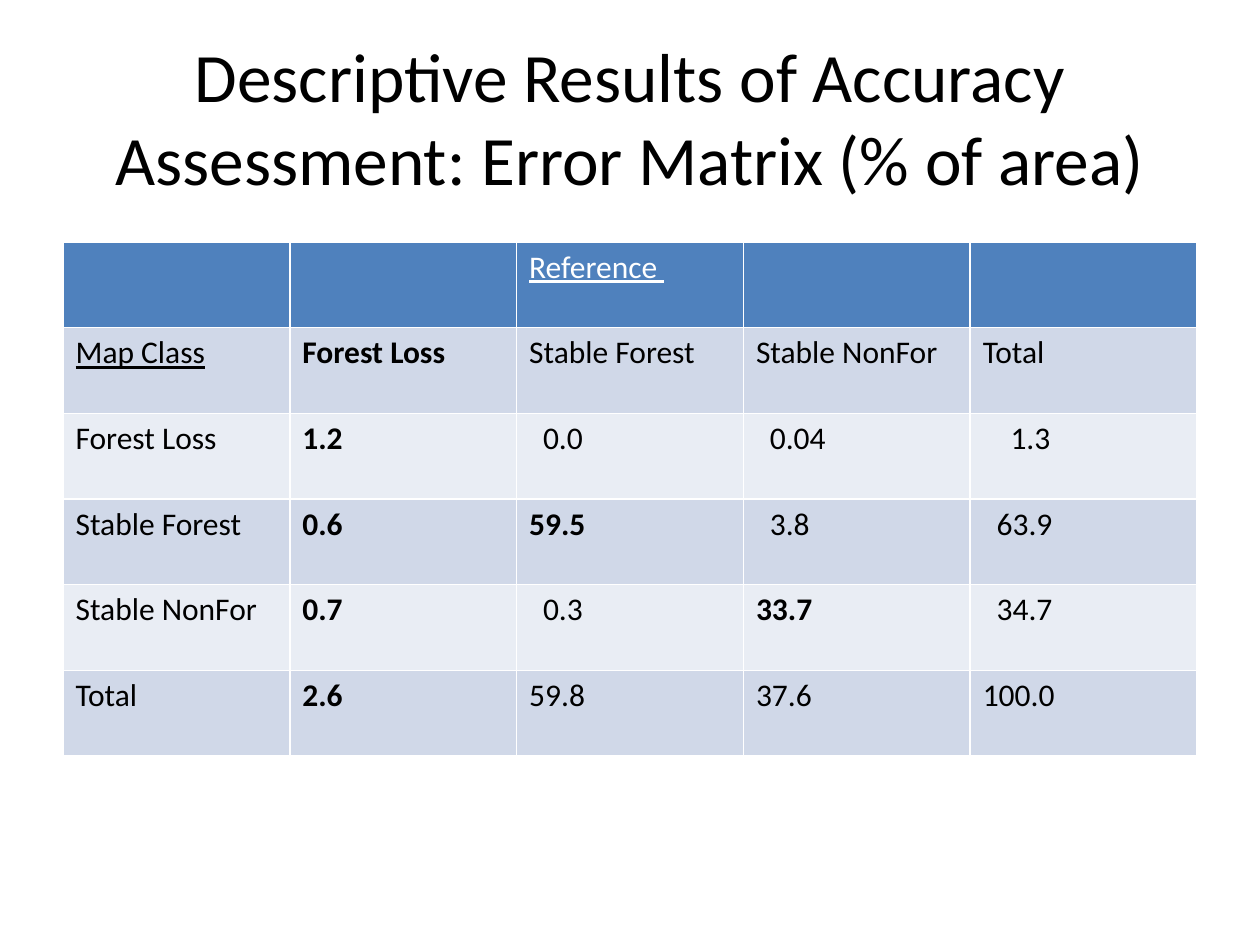
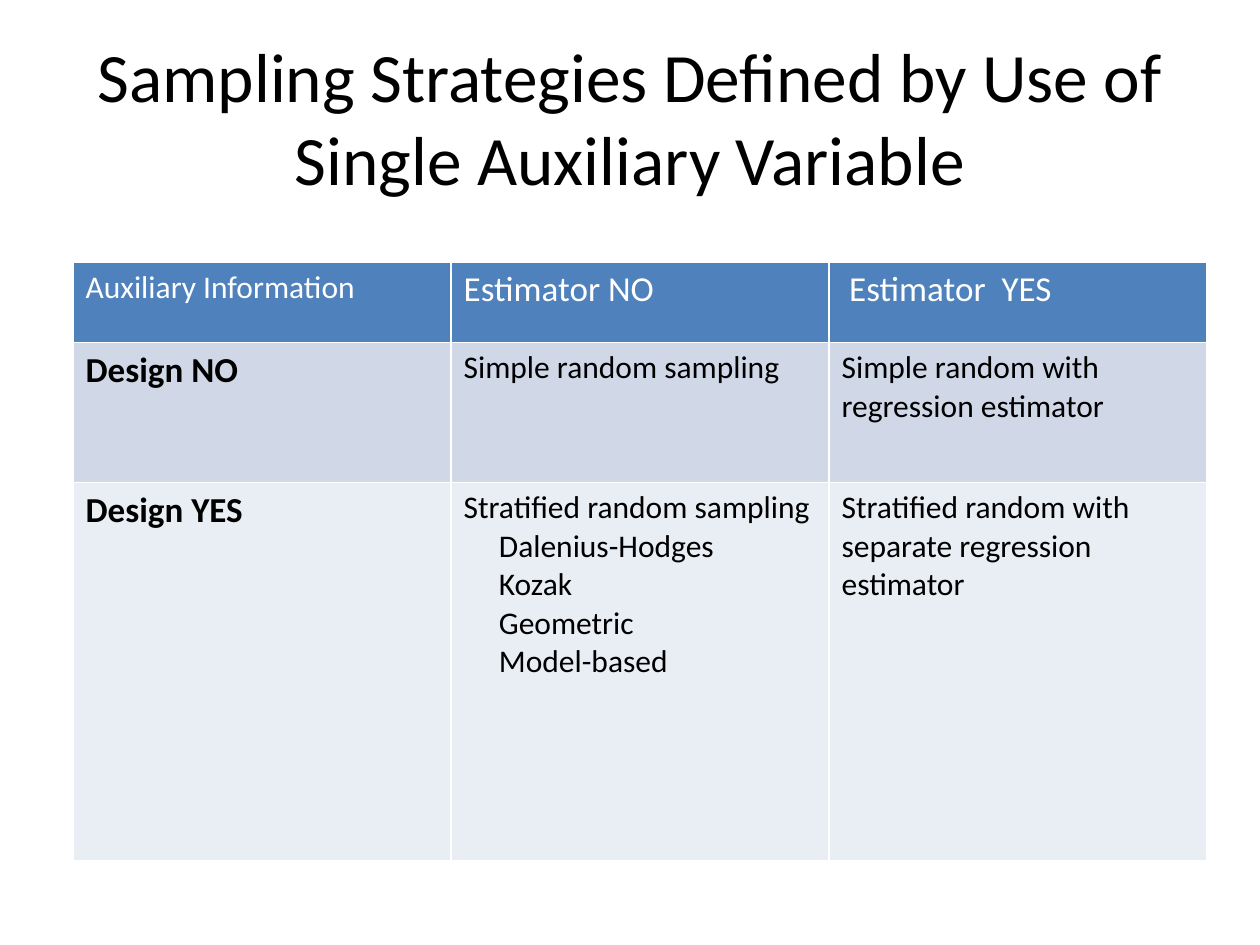
import pptx
import pptx.dml.color
import pptx.enum.text
import pptx.util

Inches = pptx.util.Inches

THEME = {
    "font": "Calibri",
    "title_size": 39.6,
    "cell_size": 18,
    "label_size": 20,
    "text": "000000",
    "header_text": "FFFFFF",
    "header_fill": "4F81BD",
    "band_fills": ["E9EDF4", "D0D8E8"],
    "digit_indent": 0.11,
    "list_indent": 0.28,
}


def add_table_slide(title, left, top, column_width, row_heights):
    """Add a titled slide with a banded table; return the table."""
    slide = presentation.slides.add_slide(presentation.slide_layouts[5])
    shape = slide.shapes.title
    for name, value in {"left": 0.5, "top": 0.3, "width": 9, "height": 1.25}.items():
        setattr(shape, name, Inches(value))
    shape.text_frame.auto_size = pptx.enum.text.MSO_AUTO_SIZE.NONE
    shape.text_frame.vertical_anchor = pptx.enum.text.MSO_ANCHOR.MIDDLE
    paragraph = shape.text_frame.paragraphs[0]
    paragraph.alignment = pptx.enum.text.PP_ALIGN.CENTER
    write(paragraph, title, THEME["text"], size=pptx.util.Pt(THEME["title_size"]))

    column_count = round(9 / column_width)
    table = slide.shapes.add_table(
        len(row_heights), column_count,
        Inches(left), Inches(top), Inches(9), Inches(sum(row_heights)),
    ).table
    for column in table.columns:
        column.width = Inches(column_width)
    for row_index, height in enumerate(row_heights):
        table.rows[row_index].height = Inches(height)
        fill = THEME["band_fills"][row_index % 2] if row_index else THEME["header_fill"]
        for cell in table.rows[row_index].cells:
            cell.fill.solid()
            cell.fill.fore_color.rgb = pptx.dml.color.RGBColor.from_string(fill)
    return table


def write(paragraph, text, color, indent=0, **formats):
    """Put one formatted run in a paragraph, indented by a number of inches."""
    if indent:
        properties = paragraph._p.get_or_add_pPr()
        properties.set("marL", str(Inches(indent)))
        properties.set("indent", "0")
    run = paragraph.add_run()
    run.text = text
    defaults = {"name": THEME["font"], "size": pptx.util.Pt(THEME["cell_size"]), "bold": False}
    for name, value in {**defaults, **formats}.items():
        setattr(run.font, name, value)
    run.font.color.rgb = pptx.dml.color.RGBColor.from_string(color)


presentation = pptx.Presentation()
presentation.slide_width = Inches(10)
presentation.slide_height = Inches(7.5)

# Slide 1: error matrix
error_matrix = [
    ["", "", "Reference ", "", ""],
    ["Map Class", "Forest Loss", "Stable Forest", "Stable NonFor", "Total"],
    ["Forest Loss", "1.2", "0.0", "0.04", "1.3"],
    ["Stable Forest", "0.6", "59.5", "3.8", "63.9"],
    ["Stable NonFor", "0.7", "0.3", "33.7", "34.7"],
    ["Total", "2.6", "59.8", "37.6", "100.0"],
]
table = add_table_slide(
    "Descriptive Results of Accuracy Assessment: Error Matrix (% of area)",
    0.5, 1.92, 1.8, [0.68] * len(error_matrix),
)
for row_index, row in enumerate(error_matrix):
    for column_index, text in enumerate(row):
        if not text:
            continue
        indent = 0
        if row_index >= 2 and column_index >= 1:
            # Line up the units with those of the column total
            missing_digits = error_matrix[-1][column_index].index(".") - text.index(".")
            indent = missing_digits * THEME["digit_indent"]
        on_diagonal = column_index == row_index - 1 and 1 <= column_index <= 3
        write(
            table.cell(row_index, column_index).text_frame.paragraphs[0],
            text,
            THEME["text"] if row_index else THEME["header_text"],
            indent,
            bold=on_diagonal or (column_index == 1 and row_index >= 1),
            underline=text in ("Reference ", "Map Class"),
        )

# Slide 2: sampling strategies
strategies = [
    [["Auxiliary Information"], ["Estimator NO"], ["Estimator  YES"]],
    [["Design NO"], ["Simple random sampling"], ["Simple random with regression estimator"]],
    [
        ["Design YES"],
        ["Stratified random sampling", "Dalenius-Hodges", "Kozak", "Geometric", "Model-based"],
        ["Stratified random with separate regression estimator"],
    ],
]
table = add_table_slide(
    "Sampling Strategies Defined by Use of Single Auxiliary Variable",
    0.58, 2.08, 3, [0.64, 1.11, 3],
)
for row_index, row in enumerate(strategies):
    for column_index, lines in enumerate(row):
        text_frame = table.cell(row_index, column_index).text_frame
        is_label = (row_index == 0) != (column_index == 0)
        for line_index, line in enumerate(lines):
            paragraph = text_frame.add_paragraph() if line_index else text_frame.paragraphs[0]
            indent = THEME["list_indent"] if line_index else 0
            if (row_index, column_index) == (0, 2):
                indent = 0.06
            write(
                paragraph,
                line,
                THEME["text"] if row_index else THEME["header_text"],
                indent,
                size=pptx.util.Pt(THEME["label_size" if is_label else "cell_size"]),
                bold=row_index > 0 and column_index == 0,
            )

presentation.save("out.pptx")
